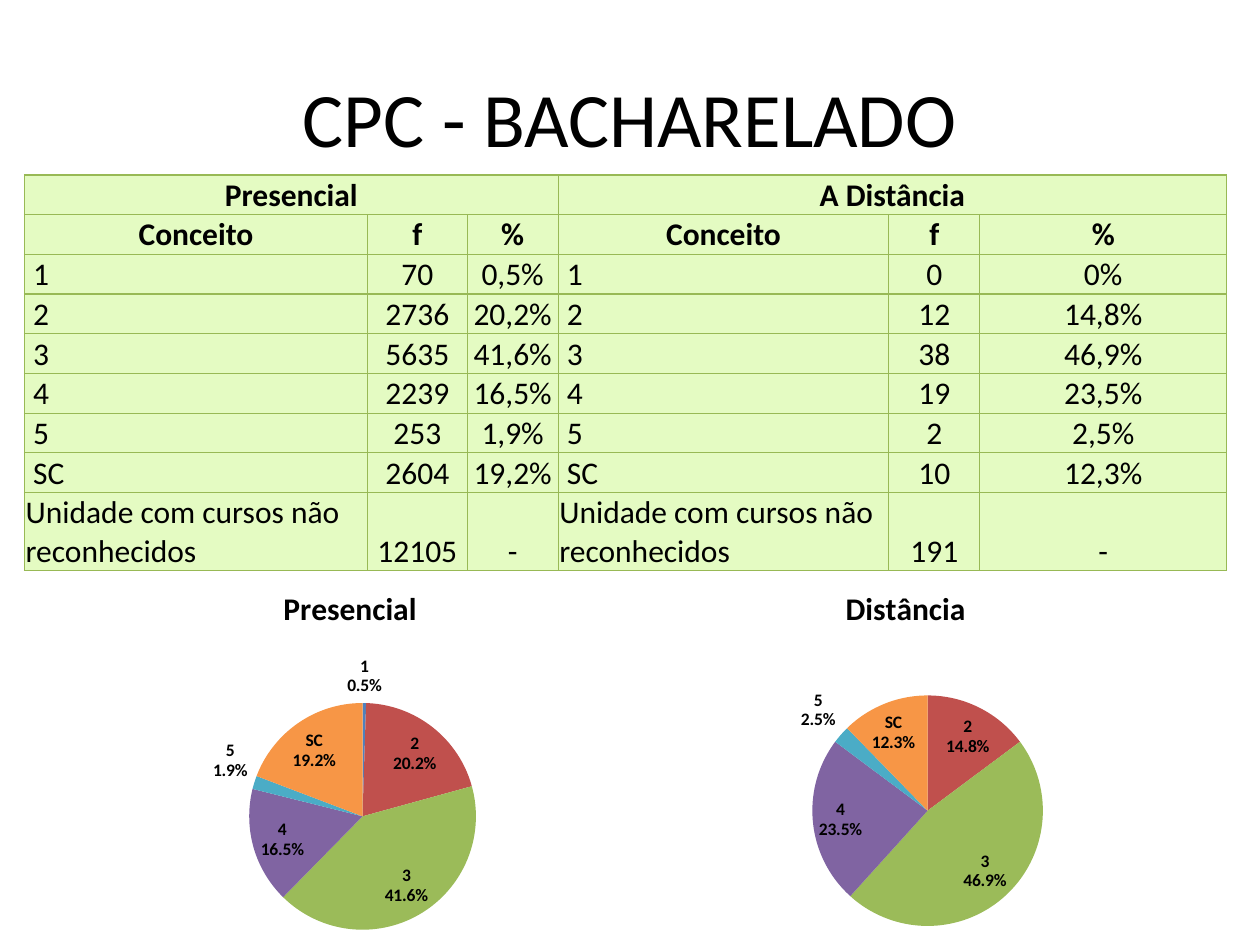
from lxml import etree
from pptx import Presentation
from pptx import util as u
from pptx.chart import data as chart_data
from pptx.dml import color
from pptx.enum import chart as charts, text
from pptx.oxml import ns, parse_xml

Pt = u.Pt
FONT = "Calibri"
COLOURS = {"ink": "000000", "cell": "E4FBC2", "border": "98B955"}
SLICES = ["4F81BD", "C0504D", "9BBB59", "8064A2", "4BACC6", "F79646"]
GRADES = ["1", "2", "3", "4", "5", "SC"]
UNRECOGNISED = "Unidade com cursos não reconhecidos"
ON_SITE = {"f": [70, 2736, 5635, 2239, 253, 2604, 12105],
           "share": [0.5, 20.2, 41.6, 16.5, 1.9, 19.2]}
DISTANCE = {"f": [0, 12, 38, 19, 2, 10, 191],
            "share": [0, 14.8, 46.9, 23.5, 2.5, 12.3]}
COLUMNS = [196, 57, 52, 189, 52, 141]


def rgb(name):
    """Return the colour for a palette name or a hex string."""
    return color.RGBColor.from_string(COLOURS.get(name, name))


def style_font(font, size, bold=False):
    """Apply the slide's font in the given size and weight."""
    font.name, font.size, font.bold = FONT, Pt(size), bold
    font.color.rgb = rgb("ink")


def add_title(page, wording):
    """Place and format the title."""
    title = page.shapes.title
    title.left, title.top, title.width, title.height = Pt(36), Pt(21.6), Pt(648), Pt(90)
    frame = title.text_frame
    frame.text, frame.vertical_anchor = wording, text.MSO_ANCHOR.MIDDLE
    para = frame.paragraphs[0]
    para.alignment = text.PP_ALIGN.CENTER
    style_font(para.font, 44)


def border_cell(cell):
    """Draw thin lines on all four sides of a cell."""
    properties = cell._tc.get_or_add_tcPr()
    for side in "LRTB":
        properties.append(parse_xml(
            f'<a:ln{side} {ns.nsdecls("a")} w="{Pt(0.75)}"><a:solidFill>'
            f'<a:srgbClr val="{COLOURS["border"]}"/></a:solidFill></a:ln{side}>'))


def fill_cell(cell, wording, header, label):
    """Write and format one table cell."""
    border_cell(cell)
    cell.fill.solid()
    cell.fill.fore_color.rgb = rgb("cell")
    cell.vertical_anchor = text.MSO_ANCHOR.BOTTOM
    cell.margin_left = Pt(5) if label and wording in GRADES else Pt(0.7)
    cell.margin_right = cell.margin_top = Pt(0.7)
    cell.margin_bottom = 0
    cell.text = wording
    para = cell.text_frame.paragraphs[0]
    left = label and not header
    para.alignment = text.PP_ALIGN.LEFT if left else text.PP_ALIGN.CENTER
    style_font(para.font, 18, header)


def table_rows():
    """Lay the counts and shares of both modes side by side."""
    rows = [["Presencial", "", "", "A Distância", "", ""], ["Conceito", "f", "%"] * 2]
    for index, grade in enumerate(GRADES + [UNRECOGNISED]):
        row = []
        for mode in (ON_SITE, DISTANCE):
            share = "-"
            if index < len(GRADES):
                share = f"{mode['share'][index]}%".replace(".", ",")
            row += [grade, str(mode["f"][index]), share]
        rows.append(row)
    return rows


def add_grades_table(page):
    """Add the table of grades for both modes."""
    rows = table_rows()
    table = page.shapes.add_table(len(rows), len(COLUMNS), Pt(14), Pt(100),
                                  Pt(sum(COLUMNS)), Pt(221)).table
    table.first_row = table.horz_banding = False
    for column, width in zip(table.columns, COLUMNS):
        column.width = Pt(width)
    for r, row in enumerate(rows):
        table.rows[r].height = Pt(37.5 if r == len(rows) - 1 else 21.6)
        for c, wording in enumerate(row):
            fill_cell(table.cell(r, c), wording, r < 2, c % 3 == 0)
    for start in (0, 3):
        table.cell(0, start).merge(table.cell(0, start + 2))


def hide_label(labels, index):
    """Remove the data label of one slice."""
    label = etree.Element(ns.qn("c:dLbl"))
    etree.SubElement(label, ns.qn("c:idx")).set("val", str(index))
    etree.SubElement(label, ns.qn("c:delete")).set("val", "1")
    labels._element.insert(0, label)


def place_plot(chart, **bounds):
    """Fix the inner plot area as fractions of the chart."""
    area = chart._chartSpace.chart.plotArea
    for layout in area.findall(ns.qn("c:layout")):
        area.remove(layout)
    sizes = "".join(f'<c:{key} val="{value}"/>' for key, value in bounds.items())
    area.insert(0, parse_xml(
        f'<c:layout {ns.nsdecls("c")}><c:manualLayout><c:layoutTarget val="inner"/>'
        f'<c:xMode val="edge"/><c:yMode val="edge"/>{sizes}</c:manualLayout></c:layout>'))


def add_pie(page, left, heading, shares, bounds):
    """Add a pie chart of grade shares."""
    content = chart_data.CategoryChartData()
    content.categories = GRADES
    content.add_series("Series 1", shares)
    chart = page.shapes.add_chart(charts.XL_CHART_TYPE.PIE, Pt(left), Pt(324),
                                  Pt(360), Pt(216), content).chart
    style_font(chart.font, 10)
    chart.has_legend = False
    chart.has_title = True
    chart.chart_title.include_in_layout = False
    chart.chart_title.text_frame.text = heading
    style_font(chart.chart_title.text_frame.paragraphs[0].font, 18, True)
    chart.plots[0].vary_by_categories = True
    series = chart.plots[0].series[0]
    for index, colour in enumerate(SLICES):
        fill = series.points[index].format.fill
        fill.solid()
        fill.fore_color.rgb = rgb(colour)
    labels = series.data_labels
    labels.show_category_name = labels.show_percentage = True
    labels.show_value = False
    labels.number_format, labels.number_format_is_linked = "0.0%", False
    labels.position = charts.XL_LABEL_POSITION.BEST_FIT
    style_font(labels.font, 10, True)
    if 0 in shares:
        hide_label(labels, shares.index(0))
    place_plot(chart, **bounds)


def main():
    """Build the slide and save it."""
    deck = Presentation()
    deck.slide_width, deck.slide_height = Pt(720), Pt(540)
    page = deck.slides.add_slide(deck.slide_layouts[5])
    add_title(page, "CPC - BACHARELADO")
    add_grades_table(page)
    add_pie(page, 20, "Presencial", ON_SITE["share"],
            {"x": 0.34, "y": 0.36, "w": 0.36, "h": 0.6})
    add_pie(page, 337.5, "Distância", DISTANCE["share"],
            {"x": 0.35, "y": 0.34, "w": 0.37, "h": 0.61})
    deck.save("out.pptx")


if __name__ == "__main__":
    main()
